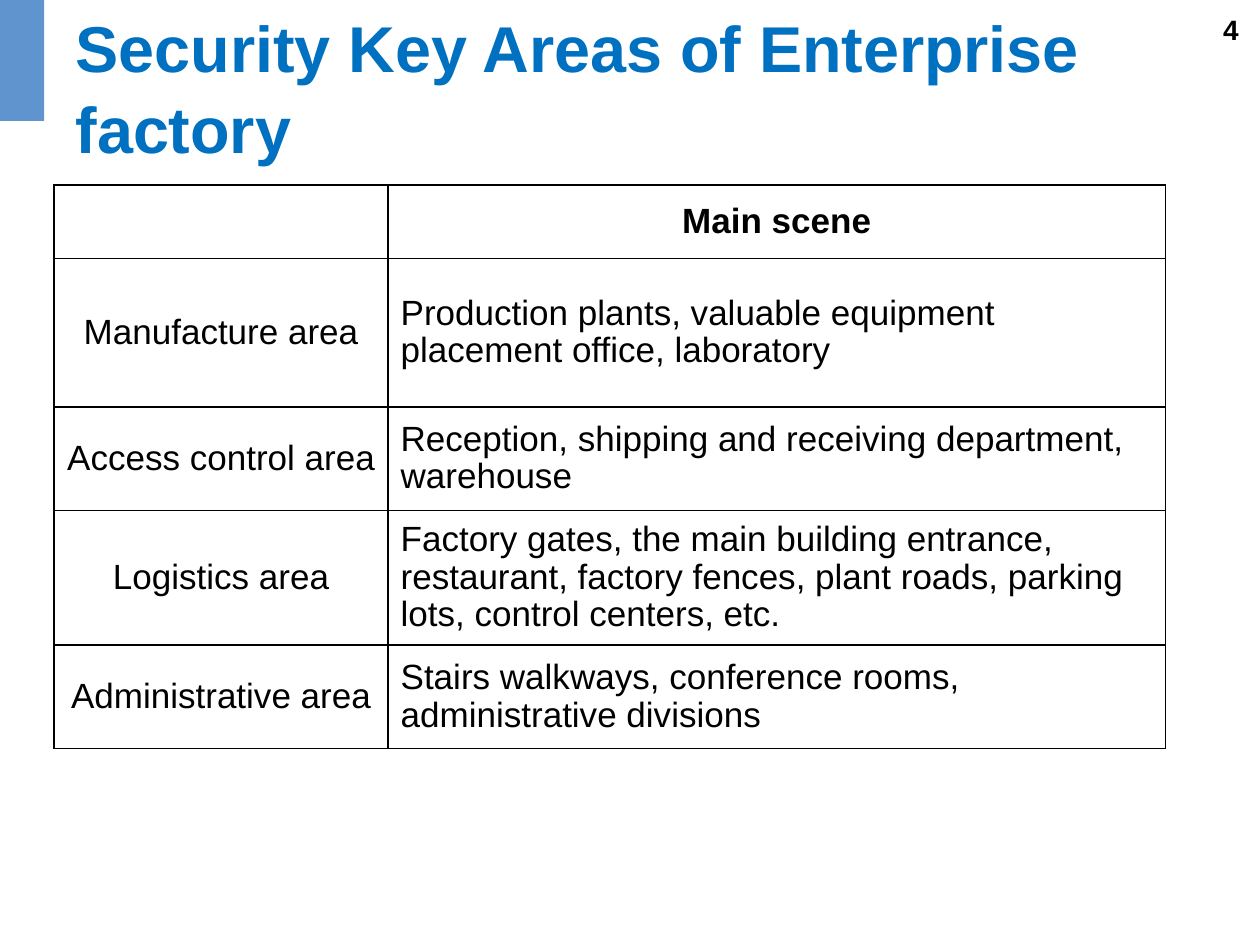
from pptx import Presentation
from pptx.dml.color import RGBColor
from pptx.enum.shapes import MSO_SHAPE
from pptx.enum.text import MSO_ANCHOR, PP_ALIGN
from pptx.oxml import parse_xml
from pptx.oxml.ns import nsdecls
from pptx.util import Inches, Pt

COLORS = {"title": "0070C0", "accent": "6094CE", "text": "000000", "paper": "FFFFFF"}
COLUMN_WIDTHS = [2.65, 6.17]
ROW_HEIGHTS = [0.58, 1.18, 0.82, 1.07, 0.82]
AREAS = [
    ("", "Main scene"),
    ("Manufacture area", "Production plants, valuable equipment placement office, laboratory"),
    ("Access control area", "Reception, shipping and receiving department, warehouse"),
    ("Logistics area", "Factory gates, the main building entrance, restaurant, factory fences, "
                       "plant roads, parking lots, control centers, etc."),
    ("Administrative area", "Stairs walkways, conference rooms, administrative divisions"),
]


def color(name):
    """Return the named colour of the slide."""
    return RGBColor.from_string(COLORS[name])


def write(frame, text, size, ink="text", bold=False, align=PP_ALIGN.LEFT, spacing=1.0):
    """Put one formatted paragraph in a text frame."""
    frame.text = text
    paragraph = frame.paragraphs[0]
    for key, value in {"alignment": align, "line_spacing": spacing}.items():
        setattr(paragraph, key, value)
    for key, value in {"name": "Arial", "size": Pt(size), "bold": bold}.items():
        setattr(paragraph.font, key, value)
    paragraph.font.color.rgb = color(ink)


def place(shape, left, top, width, height):
    """Move and size a shape in inches."""
    box = {"left": left, "top": top, "width": width, "height": height}
    for key, value in box.items():
        setattr(shape, key, Inches(value))


def add_heading(slide, text):
    """Fill the title placeholder."""
    title = slide.shapes.title
    place(title, 0.5, 0.05, 9, 1.25)
    write(title.text_frame, text, 37, "title", True, spacing=1.05)
    for key, value in {"word_wrap": True, "vertical_anchor": MSO_ANCHOR.MIDDLE}.items():
        setattr(title.text_frame, key, value)


def add_page_number(slide, number):
    """Write the page number in the top right corner."""
    corner = slide.shapes.add_textbox(Inches(7.6), Inches(0.05), Inches(2.33), Inches(0.52))
    corner.text_frame.word_wrap = True
    write(corner.text_frame, number, 16, bold=True, align=PP_ALIGN.RIGHT)


def add_accent(slide):
    """Draw the coloured block beside the title."""
    block = slide.shapes.add_shape(
        MSO_SHAPE.RECTANGLE, 0, Inches(-0.03), Inches(0.35), Inches(0.99))
    block.shadow.inherit = False
    block.fill.solid()
    block.fill.fore_color.rgb = color("accent")
    block.line.fill.background()


def outline(cell):
    """Give a cell thin lines on its four sides."""
    properties = cell._tc.get_or_add_tcPr()
    for index, side in enumerate(("lnL", "lnR", "lnT", "lnB")):
        properties.insert(index, parse_xml(
            f'<a:{side} {nsdecls("a")} w="{Pt(1)}"><a:solidFill>'
            f'<a:srgbClr val="{COLORS["text"]}"/></a:solidFill></a:{side}>'))


def add_area_table(slide):
    """Build the table of areas and their scenes."""
    table = slide.shapes.add_table(
        len(AREAS), len(COLUMN_WIDTHS), Inches(0.43), Inches(1.47),
        Inches(sum(COLUMN_WIDTHS)), Inches(sum(ROW_HEIGHTS))).table
    for key in ("first_row", "horz_banding"):
        setattr(table, key, False)
    for column, width in zip(table.columns, COLUMN_WIDTHS):
        column.width = Inches(width)
    for row_index, (row, height, texts) in enumerate(zip(table.rows, ROW_HEIGHTS, AREAS)):
        row.height = Inches(height)
        header = row_index == 0
        for column_index, (cell, text) in enumerate(zip(row.cells, texts)):
            centred = header or column_index == 0
            align = PP_ALIGN.CENTER if centred else PP_ALIGN.LEFT
            write(cell.text_frame, text, 20, bold=header, align=align, spacing=0.97)
            cell.vertical_anchor = MSO_ANCHOR.MIDDLE
            cell.fill.solid()
            cell.fill.fore_color.rgb = color("paper")
            outline(cell)


def main():
    """Build and save the slide."""
    deck = Presentation()
    deck.slide_width, deck.slide_height = Inches(10), Inches(7.5)
    slide = deck.slides.add_slide(deck.slide_layouts.get_by_name("Title Only"))
    add_page_number(slide, "4")
    add_heading(slide, "Security Key Areas of Enterprise factory")
    add_accent(slide)
    add_area_table(slide)
    deck.save("out.pptx")


if __name__ == "__main__":
    main()
